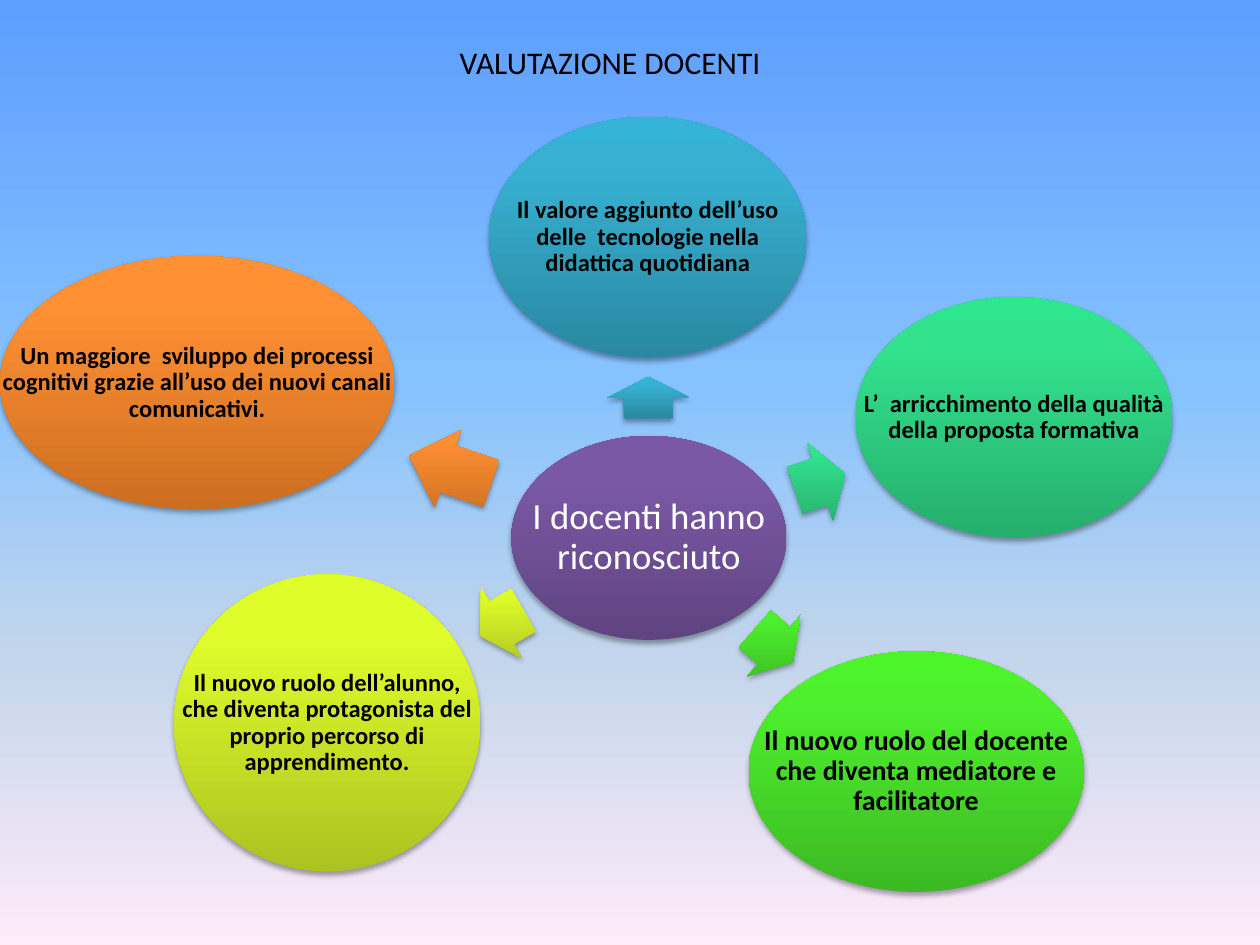
from dataclasses import dataclass

from lxml.etree import SubElement
from pptx import Presentation
from pptx.dml.color import RGBColor
from pptx.enum.shapes import MSO_SHAPE as Preset
from pptx.enum.text import MSO_ANCHOR as Anchor, PP_ALIGN as Align
from pptx.oxml.ns import qn
from pptx.util import Cm, Pt


@dataclass(frozen=True)
class Theme:
    font: str = "Calibri"
    dark: str = "000000"
    light: str = "FFFFFF"
    title_size: int = 18
    hub_size: int = 21
    sky: tuple = ((0, "5E9EFF"), (40, "85C2FF"), (70, "C4D6EB"), (100, "FFEBFA"))
    # Bottom, upper and top colour of each gradient
    purple: tuple = ("5F4480", "7B58A6", "7C57A8")
    teal: tuple = ("2A88A2", "37B1D2", "34B4D6")
    mint: tuple = ("26AE6D", "32E28D", "2EE68E")
    green: tuple = ("3CB923", "4EF02E", "4CF52A")
    lime: tuple = ("ACC321", "DFFD2B", "E1FF2B")
    orange: tuple = ("CC6E20", "FF9034", "FF9136")


theme = Theme()
deck = Presentation()
deck.slide_width, deck.slide_height = Cm(25.4), Cm(19.05)
page = deck.slides.add_slide(deck.slide_layouts[6])


def set_gradient(fill, owner, stops, angle):
    fill.gradient()
    gradient = owner.find(".//" + qn("a:gradFill"))
    for child in list(gradient):
        gradient.remove(child)
    gradient.set("rotWithShape", "0")
    stop_list = SubElement(gradient, qn("a:gsLst"))
    for position, color in stops:
        stop = SubElement(stop_list, qn("a:gs"), pos=str(position * 1000))
        SubElement(stop, qn("a:srgbClr"), val=color)
    SubElement(gradient, qn("a:lin"), ang=str(angle * 60000), scaled="0")


def add_text(bounds, text, size, color, bold=False, inset=0.05, spacing=0.9):
    box = page.shapes.add_textbox(*map(Cm, bounds))
    frame = box.text_frame
    frame.word_wrap = True
    frame.vertical_anchor = Anchor.MIDDLE
    frame.margin_left = frame.margin_right = Cm(inset)
    frame.margin_top = frame.margin_bottom = Cm(inset)
    para = frame.paragraphs[0]
    para.text = text
    para.alignment = Align.CENTER
    para.line_spacing = spacing
    para.font.name, para.font.size, para.font.bold = theme.font, Pt(size), bold
    para.font.color.rgb = RGBColor.from_string(color)


# Background and title
set_gradient(page.background.fill, page.element, theme.sky, 90)
add_text((1.9, 0.74, 20.8, 1.02), "VALUTAZIONE DOCENTI", theme.title_size,
         theme.dark, inset=0.13, spacing=1.0)

# Hub and topics: colours, ellipse bounds, text, size, arrow (left, top, length, angle)
topics = [
    (theme.purple, (10.31, 8.79, 5.54, 4.11),
     "I docenti hanno riconosciuto", theme.hub_size, None),
    (theme.teal, (9.86, 2.36, 6.4, 4.85),
     "Il valore aggiunto dell’uso delle  tecnologie nella didattica quotidiana",
     14, (12.65, 7.19, 0.84, 269.6)),
    (theme.mint, (17.25, 5.99, 6.38, 4.85),
     "L’  arricchimento della qualità della proposta formativa",
     14, (16, 8.89, 1.07, 341.7)),
    (theme.green, (15.09, 13.13, 6.76, 4.85),
     "Il nuovo ruolo del docente che diventa mediatore e facilitatore",
     16, (15.09, 12.19, 1.02, 41.1)),
    (theme.lime, (3.51, 11.58, 6.17, 5.99),
     "Il nuovo ruolo dell’alunno, che diventa protagonista del proprio percorso "
     "di apprendimento.",
     14, (9.6, 11.73, 1.02, 150.1)),
    (theme.orange, (0, 5.16, 7.95, 5.11),
     "Un maggiore  sviluppo dei processi cognitivi grazie all’uso dei nuovi canali "
     "comunicativi.",
     14, (8.2, 8.64, 1.75, 198.9)),
]
arrow_width = 1.65

for colors, bounds, text, size, arrow in topics:
    parts = [(Preset.OVAL, bounds, 0)]
    if arrow:
        left, top, length, angle = arrow
        parts.insert(0, (Preset.RIGHT_ARROW, (left, top, length, arrow_width), angle))

    for preset, place, angle in parts:
        shape = page.shapes.add_shape(preset, *map(Cm, place))
        shape.rotation = angle
        if preset == Preset.RIGHT_ARROW:
            shape.adjustments[0], shape.adjustments[1] = 0.6, 0.5
        set_gradient(shape.fill, shape.element, zip((0, 80, 100), colors), 270)
        shape.line.fill.background()

        # Soft shadow falling straight down
        shape.shadow.inherit = False
        effects = shape.element.find(".//" + qn("a:effectLst"))
        shadow = SubElement(effects, qn("a:outerShdw"), blurRad=str(Pt(3.1)),
                            dist=str(Pt(1.8)), dir="5400000", rotWithShape="0")
        shade = SubElement(shadow, qn("a:srgbClr"), val=theme.dark)
        SubElement(shade, qn("a:alpha"), val="35000")

    # Labels span the whole ellipse
    if arrow:
        add_text(bounds, text, size, theme.dark, bold=True)
    else:
        add_text(bounds, text, size, theme.light, inset=0.08)

deck.save("out.pptx")
